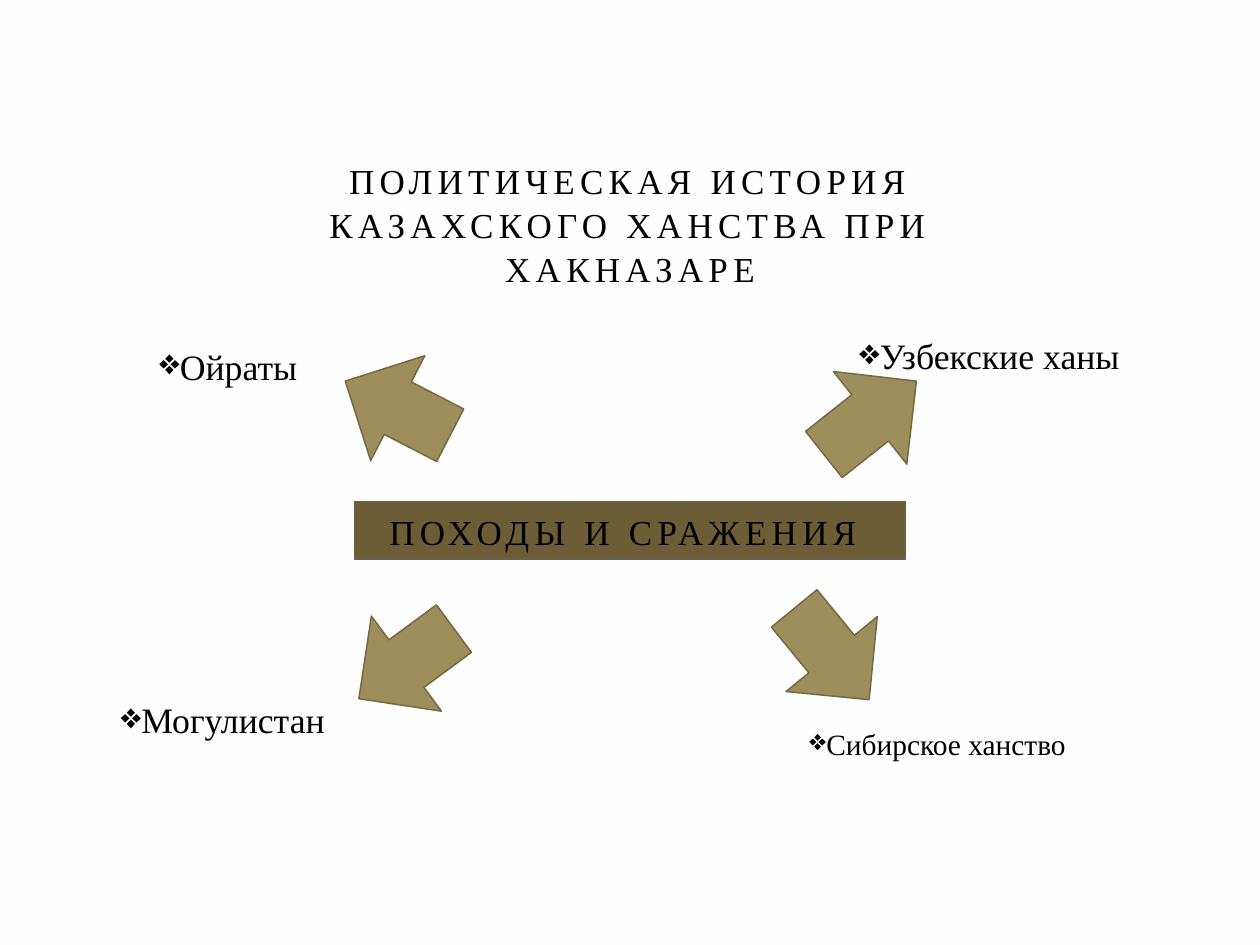
from pptx import Presentation
from pptx.dml.color import RGBColor
from pptx.enum.shapes import MSO_SHAPE as Kind
from pptx.enum.text import MSO_ANCHOR as Anchor, PP_ALIGN as Align
from pptx.oxml.ns import qn
from pptx.util import Pt
from lxml.etree import SubElement


def tint(code):
    return RGBColor.from_string(code)


class Deck:
    """Holds the style and the current slide."""

    face, ink = "Times New Roman", "000000"

    def __init__(self, wide, high):
        self.prs = Presentation()
        self.prs.slide_width, self.prs.slide_height = Pt(wide), Pt(high)
        self.slide = self.prs.slides.add_slide(self.prs.slide_layouts[5])
        back = self.slide.background.fill
        back.solid()
        back.fore_color.rgb = tint("FFFEFF")

    def style(self, para, size):
        font = para.font
        font.name, font.size = self.face, Pt(size)
        font.color.rgb = tint(self.ink)

    def caps(self, frame, text):
        frame.word_wrap = True
        frame.vertical_anchor = Anchor.BOTTOM
        para = frame.paragraphs[0]
        para.alignment = Align.CENTER
        run = para.add_run()
        run.text = text
        run._r.get_or_add_rPr().set("spc", "300")
        self.style(para, 20)
        return para

    def title(self, text, *box):
        head = self.slide.shapes.title
        head.left, head.top, head.width, head.height = map(Pt, box)
        frame = head.text_frame
        frame.margin_left = frame.margin_right = Pt(14)
        self.caps(frame, text).line_spacing = 1.05

    def shape(self, kind, box, fill, line, width):
        form = self.slide.shapes.add_shape(kind, *map(Pt, box))
        form.shadow.inherit = False
        form.fill.solid()
        form.fill.fore_color.rgb = tint(fill)
        form.line.color.rgb = tint(line)
        form.line.width = Pt(width)
        return form

    def band(self, text, *box):
        form = self.shape(Kind.RECTANGLE, box, "6D5D36", "6B6149", 0.75)
        self.caps(form.text_frame, text)

    def arrow(self, left, top, turn, side=67.5):
        box = left, top, side, side
        form = self.shape(Kind.DOWN_ARROW, box, "9E8E5C", "756944", 0.85)
        form.rotation = turn

    def label(self, text, left, top, width, size=20.4):
        box = self.slide.shapes.add_textbox(*map(Pt, (left, top, width, 39.6)))
        frame = box.text_frame
        frame.word_wrap = True
        para = frame.paragraphs[0]
        para.text = text
        para.line_spacing = 1.3
        props = para._p.get_or_add_pPr()
        props.set("marL", "0")
        props.set("indent", str(-Pt(21.6)))
        SubElement(props, qn("a:buChar")).set("char", "❖")
        self.style(para, size)


def main():
    deck = Deck(720, 540)
    deck.title("ПОЛИТИЧЕСКАЯ ИСТОРИЯ КАЗАХСКОГО ХАНСТВА ПРИ ХАКНАЗАРЕ",
               108, 102, 504, 67)
    deck.label("Ойраты", 84, 186, 112.5)
    deck.label("Могулистан", 62, 388, 157.5)
    deck.label("Узбекские ханы", 484, 180, 180)
    deck.label("Сибирское ханство", 455.5, 405.5, 186, 16.8)
    for left, top, turn in ((193.5, 199.5, 117.3), (198.5, 345.5, 53.6),
                            (463.5, 205, 231.6), (441.5, 340, 320.6)):
        deck.arrow(left, top, turn)
    deck.band("ПОХОДЫ И СРАЖЕНИЯ ", 202.5, 286.5, 315, 33)
    deck.prs.save("out.pptx")


if __name__ == "__main__":
    main()
